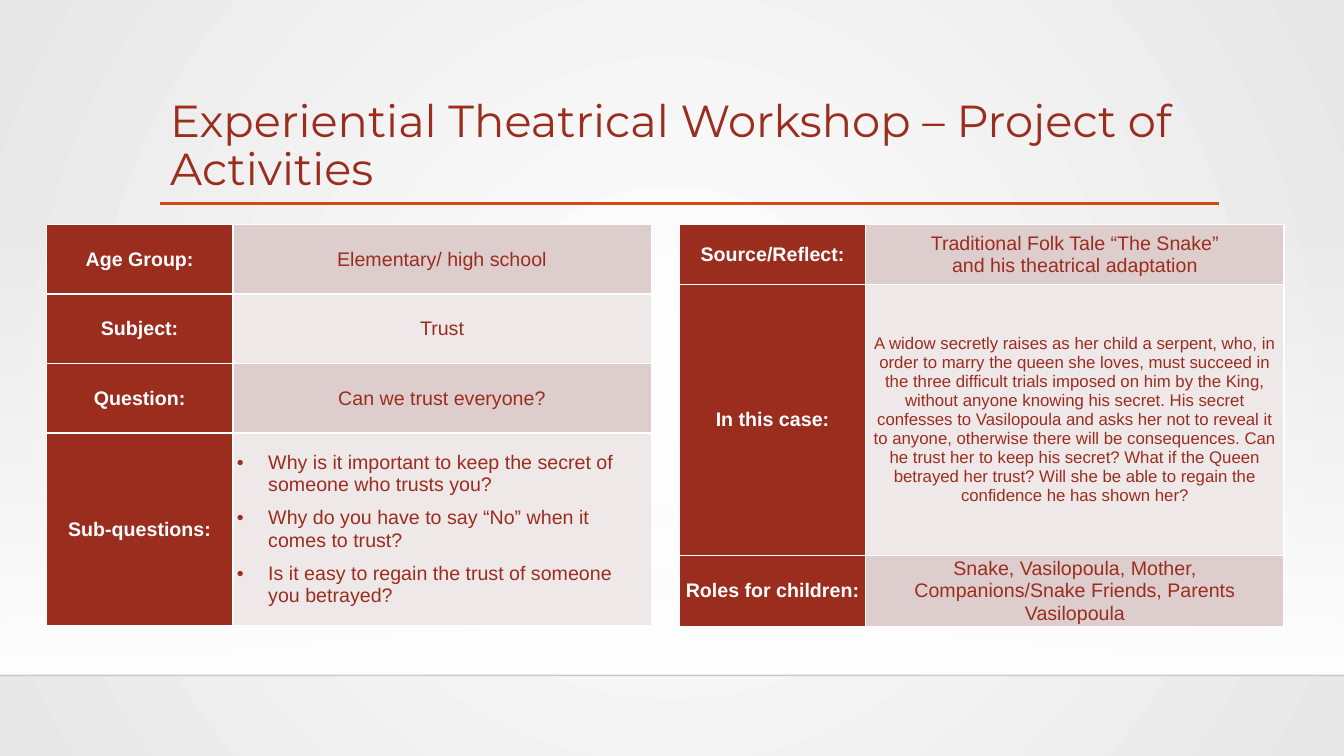
from pptx import Presentation
from pptx.dml.color import RGBColor
from pptx.enum.shapes import MSO_CONNECTOR, MSO_SHAPE
from pptx.enum.text import MSO_ANCHOR, PP_ALIGN
from pptx.oxml.ns import qn
from pptx.util import Cm, Pt
from lxml.etree import SubElement

RUST = RGBColor(0x9B, 0x2D, 0x1F)
ORANGE = RGBColor(0xD3, 0x48, 0x17)
ROSE = RGBColor(0xDE, 0xCD, 0xCD)
PALE = RGBColor(0xEF, 0xE8, 0xE8)
WHITE = RGBColor(0xFF, 0xFF, 0xFF)
GREY = RGBColor(0xE7, 0xE7, 0xE7)
BLACK = RGBColor(0, 0, 1)
WIDE, HIGH = 33.87, 19.05

TITLE = "Experiential Theatrical Workshop – Project of Activities"
LEFT = [
    (1.75, "Age Group:", ["Elementary/ high school"], {}),
    (1.75, "Subject:", ["Trust"], {}),
    (1.75, "Question:", ["Can we trust everyone?"], {}),
    (4.85, "Sub-questions:", [
        "Why is it important to keep the secret of someone who trusts you?",
        "Why do you have to say “No” when it comes to trust?",
        "Is it easy to regain the trust of someone you betrayed?",
    ], {"dots": True}),
]
RIGHT = [
    (1.5, "Source/Reflect:",
     ["Traditional Folk Tale “The Snake”", "and his theatrical adaptation"], {"after": 0}),
    (6.83, "In this case:", [
        "A widow secretly raises as her child a serpent, who, in order to marry the queen "
        "she loves, must succeed in the three difficult trials imposed on him by the King, "
        "without anyone knowing his secret. His secret confesses to Vasilopoula and asks "
        "her not to reveal it to anyone, otherwise there will be consequences. Can he trust "
        "her to keep his secret? What if the Queen betrayed her trust? Will she be able to "
        "regain the confidence he has shown her?",
    ], {"size": 12}),
    (1.8, "Roles for children:",
     ["Snake, Vasilopoula, Mother, Companions/Snake Friends, Parents Vasilopoula"], {}),
]


def set_alpha(node, share):
    """Make the first RGB colour under a node partly see-through."""
    color = node.xpath(".//a:srgbClr")[0]
    SubElement(color, qn("a:alpha"), val=str(share * 1000))


def blend(fill, start, end):
    """Fill with a gradient running from the first colour to the last."""
    fill.gradient()
    for stop, color in zip(fill.gradient_stops, (start, end)):
        stop.color.rgb = color


def add_rule(slide, left, right, top, color, width):
    """Draw a level line and return it."""
    rule = slide.shapes.add_connector(
        MSO_CONNECTOR.STRAIGHT, Cm(left), Cm(top), Cm(right), Cm(top))
    rule.line.color.rgb = color
    rule.line.width = Pt(width)
    SubElement(rule.element.spPr, qn("a:effectLst"))
    return rule


def add_text(para, text, size, color, face="Arial", bold=False):
    """Add one styled run to a paragraph."""
    run = para.add_run()
    run.text = text
    run.font.size = Pt(size)
    run.font.name = face
    run.font.bold = bold
    run.font.color.rgb = color


def add_stage(slide, top, height):
    """Paint the backdrop, the light band and the floor line."""
    blend(slide.background.fill, WHITE, GREY)
    grad = slide.element.xpath(".//p:bg//a:gradFill")[0]
    for old in grad.xpath("./a:lin"):
        grad.remove(old)
    ring = SubElement(grad, qn("a:path"), path="circle")
    SubElement(ring, qn("a:fillToRect"), l="50000", t="50000", r="50000", b="50000")
    band = slide.shapes.add_shape(MSO_SHAPE.RECTANGLE, 0, Cm(top), Cm(WIDE), Cm(height))
    band.shadow.inherit = False
    band.line.fill.background()
    blend(band.fill, WHITE, WHITE)
    band.fill.gradient_angle = 270
    set_alpha(band.element.spPr, 0)
    floor = add_rule(slide, 0, WIDE, top + height, BLACK, 1)
    set_alpha(floor.element.spPr, 20)


def add_title(slide, left, top, width, height):
    """Place the title with its rule along the foot of the box."""
    add_rule(slide, left, left + width, top + height - 0.03, ORANGE, 2.5)
    frame = slide.shapes.add_textbox(Cm(left), Cm(top), Cm(width), Cm(height)).text_frame
    frame.word_wrap = True
    frame.vertical_anchor = MSO_ANCHOR.MIDDLE
    para = frame.paragraphs[0]
    para.line_spacing = 0.9
    add_text(para, TITLE, 32, RUST, "Montserrat")


def fill_cell(cell, lines, back, color, bold=False, size=14, after=8, dots=False):
    """Style a table cell and write its lines."""
    cell.margin_left = cell.margin_right = Cm(0.1)
    cell.margin_top = cell.margin_bottom = 0
    cell.vertical_anchor = MSO_ANCHOR.MIDDLE
    props = cell._tc.get_or_add_tcPr()
    for side in "LRTB":
        edge = SubElement(props, qn("a:ln" + side), w=str(Pt(1)))
        paint = SubElement(edge, qn("a:solidFill"))
        SubElement(paint, qn("a:srgbClr"), val=str(WHITE))
    cell.fill.solid()
    cell.fill.fore_color.rgb = back
    frame = cell.text_frame
    for index, line in enumerate(lines):
        para = frame.add_paragraph() if index else frame.paragraphs[0]
        if dots:
            style = para._p.get_or_add_pPr()
            style.set("marL", str(Cm(0.79)))
            style.set("indent", str(-Cm(0.79)))
            SubElement(style, qn("a:buFont"), typeface="Arial")
            SubElement(style, qn("a:buChar"), char="•")
        para.alignment = PP_ALIGN.LEFT if dots else PP_ALIGN.CENTER
        para.line_spacing = 1.01
        para.space_after = Pt(after)
        add_text(para, line, size, color, bold=bold)


def add_grid(slide, left, top, width, rows):
    """Place a table of labels and details."""
    height = sum(row[0] for row in rows)
    grid = slide.shapes.add_table(
        len(rows), 2, Cm(left), Cm(top), Cm(width), Cm(height)).table
    grid.columns[0].width = Cm(4.7)
    grid.columns[1].width = Cm(width - 4.7)
    for index, (tall, label, lines, style) in enumerate(rows):
        grid.rows[index].height = Cm(tall)
        fill_cell(grid.cell(index, 0), [label], RUST, WHITE, bold=True)
        fill_cell(grid.cell(index, 1), lines, (ROSE, PALE)[index % 2], RUST, **style)


def main():
    """Build and save the slide."""
    deck = Presentation()
    deck.slide_width, deck.slide_height = Cm(WIDE), Cm(HIGH)
    slide = deck.slides.add_slide(deck.slide_layouts[6])
    add_stage(slide, 5.61, 11.41)
    add_title(slide, 4.04, 2.24, 26.68, 2.92)
    for left, rows in ((1.17, LEFT), (17.12, RIGHT)):
        add_grid(slide, left, 5.66, 15.24, rows)
    deck.save("out.pptx")


if __name__ == "__main__":
    main()
